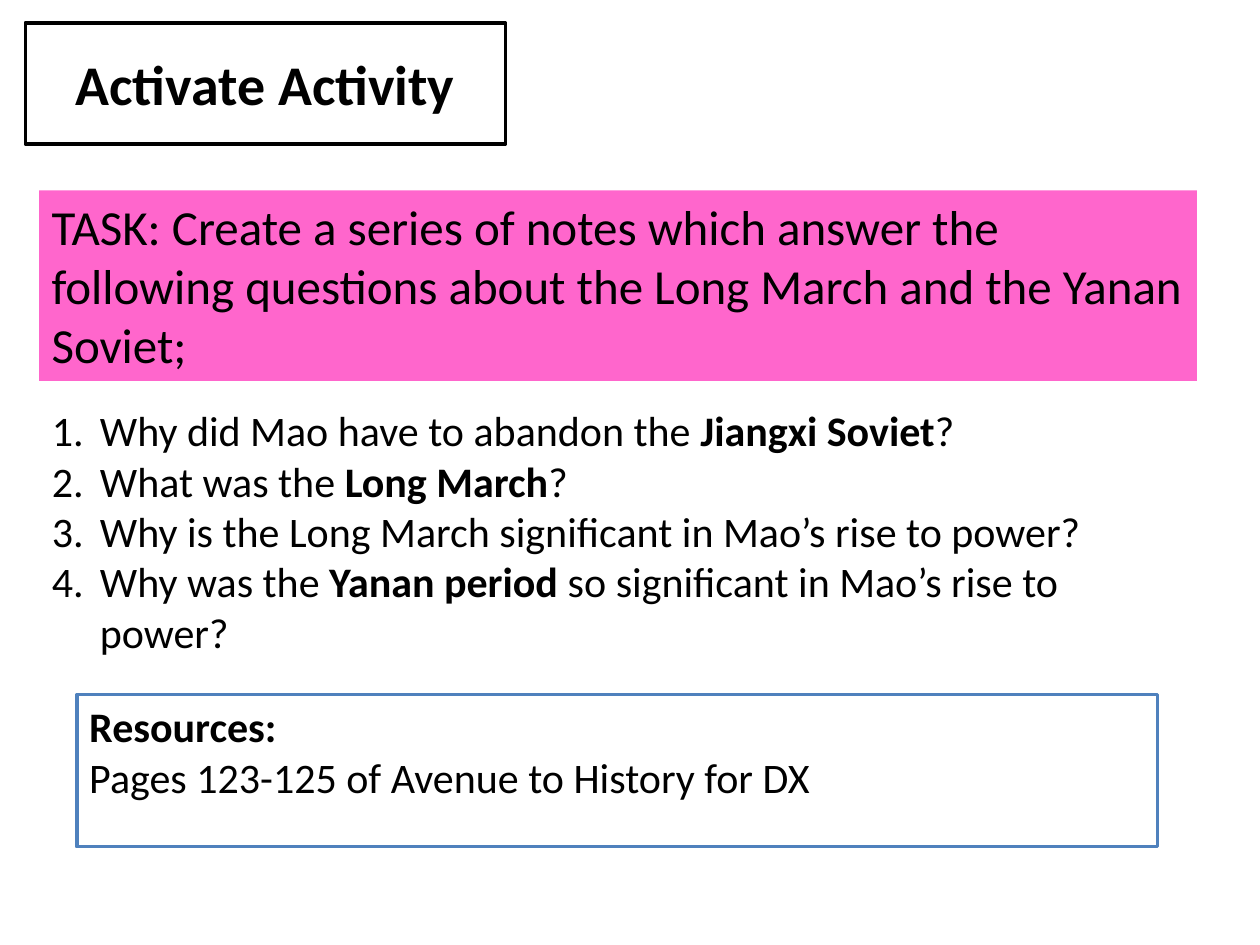
import pptx
import pptx.util
import pptx.dml.color
import pptx.enum.shapes
import pptx.enum.text
import pptx.oxml
import pptx.oxml.ns

Cm, Pt = pptx.util.Cm, pptx.util.Pt
ALIGN = pptx.enum.text.PP_ALIGN
ANCHOR = pptx.enum.text.MSO_ANCHOR

COLORS = {"text": "000000", "paper": "FFFFFF", "task": "FF66CC", "frame": "4F81BD"}

# Each paragraph is a list of (text, bold) runs.
TITLE = [[("Activate Activity", True)]]
TASK = [[("TASK: Create a series of notes which answer the following questions "
          "about the Long March and the Yanan Soviet;", False)]]
QUESTIONS = [
    [("Why did Mao have to abandon the ", False), ("Jiangxi Soviet", True), ("?", False)],
    [("What was the ", False), ("Long March", True), ("?", False)],
    [("Why is the Long March significant in Mao’s rise to power?", False)],
    [("Why was the ", False), ("Yanan period ", True),
     ("so significant in Mao’s rise to power?", False)],
]
RESOURCES = [
    [("Resources:", True)],
    [("Pages 123-125 of Avenue to History for DX", False)],
]

MARGIN, WIDTH = 0.79, 23.34  # shared by the task and the questions, in cm
NUMBER_INDENT = Cm(0.97)


def rgb(name):
    return pptx.dml.color.RGBColor.from_string(COLORS[name])


def place(sp, left, top, width, height):
    sp.left, sp.top, sp.width, sp.height = map(Cm, (left, top, width, height))


def paint(sp, fill, line=None):
    sp.fill.solid()
    sp.fill.fore_color.rgb = rgb(fill)
    if line:
        sp.line.color.rgb = rgb(line)
        sp.line.width = Pt(2)
    else:
        sp.line.fill.background()


def write(sp, paragraphs, size, align=ALIGN.LEFT, anchor=ANCHOR.TOP):
    tf = sp.text_frame
    tf.word_wrap = True
    tf.auto_size = pptx.enum.text.MSO_AUTO_SIZE.NONE
    tf.vertical_anchor = anchor
    for i, runs in enumerate(paragraphs):
        p = tf.add_paragraph() if i else tf.paragraphs[0]
        p.alignment = align
        p.space_before = Pt(0)
        for text, bold in runs:
            r = p.add_run()
            r.text = text
            r.font.name = "Calibri"
            r.font.size = Pt(size)
            r.font.bold = bold
            r.font.color.rgb = rgb("text")


def number(p):
    """Give a paragraph an automatic 1. 2. 3. number with a hanging indent."""
    pPr = p._p.get_or_add_pPr()
    pPr.set("marL", str(NUMBER_INDENT))
    pPr.set("indent", str(-NUMBER_INDENT))
    pPr.append(pptx.oxml.parse_xml(
        f'<a:buFont {pptx.oxml.ns.nsdecls("a")} typeface="+mj-lt"/>'))
    pPr.append(pptx.oxml.parse_xml(
        f'<a:buAutoNum {pptx.oxml.ns.nsdecls("a")} type="arabicPeriod"/>'))


def add_box(s, box, paragraphs, size, fill, line=None):
    sp = s.shapes.add_shape(pptx.enum.shapes.MSO_SHAPE.RECTANGLE, *map(Cm, box))
    sp.shadow.inherit = False
    paint(sp, fill, line)
    write(sp, paragraphs, size)


def main():
    prs = pptx.Presentation()
    prs.slide_width, prs.slide_height = Cm(25.4), Cm(19.05)
    s = prs.slides.add_slide(prs.slide_layouts[1])

    title = s.shapes.title
    place(title, 0.51, 0.46, 9.68, 2.44)
    paint(title, "paper", "text")
    write(title, TITLE, 32, ALIGN.CENTER, ANCHOR.MIDDLE)

    add_box(s, (MARGIN, 3.84, WIDTH, 3.84), TASK, 28, "task")

    questions = s.placeholders[1]
    place(questions, MARGIN, 8.03, WIDTH, 5.38)
    write(questions, QUESTIONS, 24)
    for p in questions.text_frame.paragraphs:
        number(p)

    add_box(s, (1.55, 14, 21.79, 3.07), RESOURCES, 24, "paper", "frame")
    prs.save("out.pptx")


if __name__ == "__main__":
    main()
